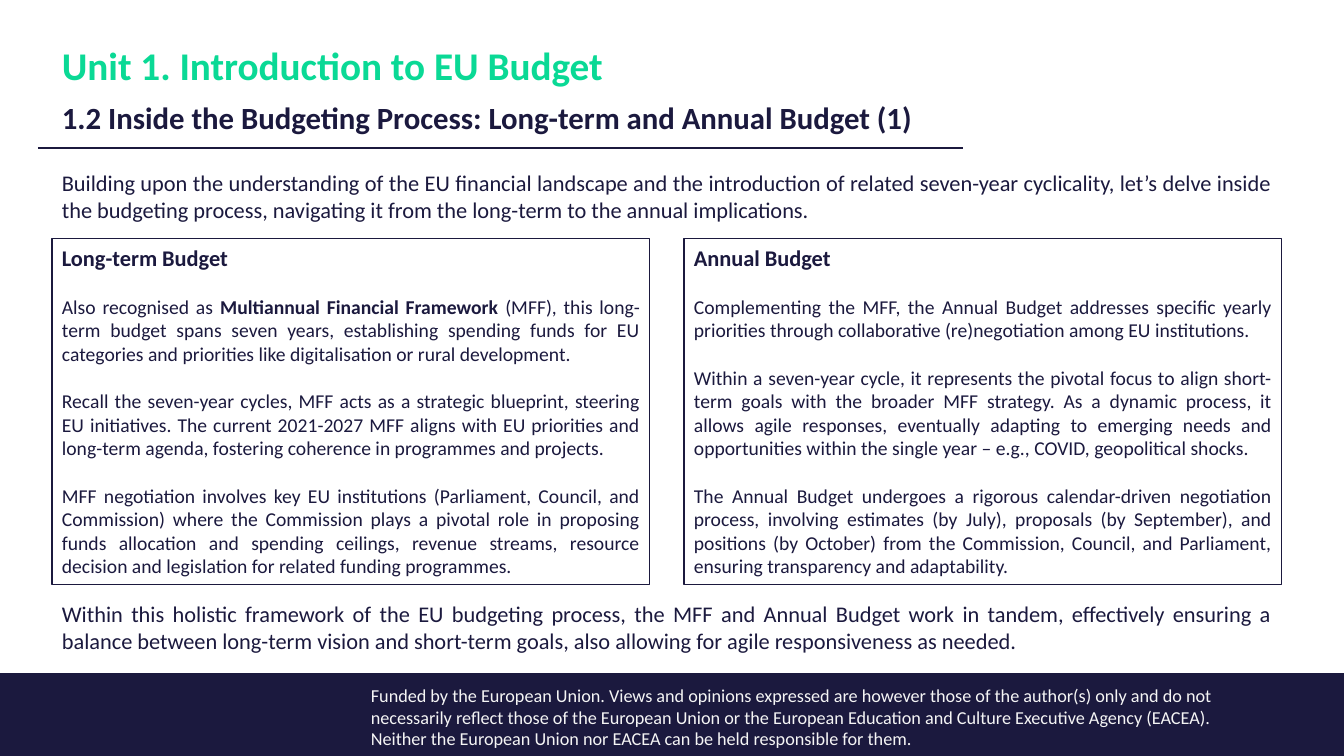
from lxml import etree
from pptx import Presentation
from pptx import util as u
from pptx.dml.color import RGBColor
from pptx.enum import shapes, text
from pptx.oxml.ns import qn

PX = 914400 / 100.8
COLORS = {"navy": "1B193E", "green": "0AD995", "light": "F5F5F5", "white": "FFFFFF"}
FONT = "Calibri"
JUSTIFY, LEFT = text.PP_ALIGN.JUSTIFY, text.PP_ALIGN.LEFT

LONG_TERM = [
    [("Also recognised as ", False), ("Multiannual Financial Framework ", True),
     ("(MFF), this long-term budget spans seven years, establishing spending funds for EU "
      "categories and priorities like digitalisation or rural development.", False)],
    [("Recall the seven-year cycles, MFF acts as a strategic blueprint, steering EU initiatives. "
      "The current 2021-2027 MFF aligns with EU priorities and long-term agenda, fostering "
      "coherence in programmes and projects.", False)],
    [("MFF negotiation involves key EU institutions (Parliament, Council, and Commission) where "
      "the Commission plays a pivotal role in proposing funds allocation and spending ceilings, "
      "revenue streams, resource decision and legislation for related funding programmes.", False)],
]
ANNUAL = [
    [("Complementing the MFF, the Annual Budget addresses specific yearly priorities through "
      "collaborative (re)negotiation among EU institutions.", False)],
    [("Within a seven-year cycle, it represents the pivotal focus to align short-term goals with "
      "the broader MFF strategy. As a dynamic process, it allows agile responses, eventually "
      "adapting to emerging needs and opportunities within the single year – e.g., COVID, "
      "geopolitical shocks.", False)],
    [("The Annual Budget undergoes a rigorous calendar-driven negotiation process, involving "
      "estimates (by July), proposals (by September), and positions (by October) from the "
      "Commission, Council, and Parliament, ensuring transparency and adaptability.", False)],
]
INTRO = ("Building upon the understanding of the EU financial landscape and the introduction of "
         "related seven-year cyclicality, let’s delve inside the budgeting process, navigating it "
         "from the long-term to the annual implications.")
CLOSING = ("Within this holistic framework of the EU budgeting process, the MFF and Annual Budget "
           "work in tandem, effectively ensuring a balance between long-term vision and short-term "
           "goals, also allowing for agile responsiveness as needed.")
DISCLAIMER = ("Funded by the European Union. Views and opinions expressed are however those of the "
              "author(s) only and do not necessarily reflect those of the European Union or the "
              "European Education and Culture Executive Agency (EACEA). Neither the European Union "
              "nor EACEA can be held responsible for them.")


def px(*lengths):
    return [u.Emu(round(length * PX)) for length in lengths]


def color(name):
    return RGBColor.from_string(COLORS[name])


def add_rectangle(slide, box, fill=None, line=None):
    shape = slide.shapes.add_shape(shapes.MSO_SHAPE.RECTANGLE, *px(*box))
    shape.shadow.inherit = False
    if fill:
        shape.fill.solid()
        shape.fill.fore_color.rgb = color(fill)
    else:
        shape.fill.background()
    if line:
        shape.line.color.rgb = color(line)
        shape.line.width = u.Pt(0.75)
    else:
        shape.line.fill.background()
    return shape


def write_paragraph(frame, runs, size, ink="navy", align=JUSTIFY, before=0, spacing=None):
    """Write (wording, bold) runs into the empty first paragraph or a new one."""
    paragraph = frame.paragraphs[0]
    if paragraph.runs:
        paragraph = frame.add_paragraph()
        paragraph.space_before = u.Pt(before)
    paragraph.alignment = align
    if spacing:
        paragraph.line_spacing = spacing
    for wording, bold in runs:
        run = paragraph.add_run()
        run.text = wording
        run.font.name = FONT
        run.font.size = u.Pt(size)
        run.font.bold = bold
        run.font.color.rgb = color(ink)


def add_text_box(slide, box, anchor=text.MSO_ANCHOR.TOP):
    frame = slide.shapes.add_textbox(*px(*box)).text_frame
    frame.word_wrap = True
    frame.vertical_anchor = anchor
    return frame


def add_footer(slide, box):
    left, top, width, height = box
    add_rectangle(slide, box, fill="navy")
    frame = add_text_box(slide, (left + 361, top + 6, 891, height - 6))
    write_paragraph(frame, [(DISCLAIMER, False)], 13, "light", LEFT)


def add_heading(slide, box):
    left, top, width, height = box
    frame = add_text_box(slide, box, text.MSO_ANCHOR.BOTTOM)
    write_paragraph(frame, [("Unit 1. Introduction to EU Budget", True)], 28, "green", spacing=0.9)
    subtitle = "1.2 Inside the Budgeting Process: Long-term and Annual Budget (1)"
    write_paragraph(frame, [(subtitle, True)], 22, align=LEFT, before=10, spacing=0.9)
    # Rule under the heading
    rule_y = top + height + 7
    rule = slide.shapes.add_connector(
        shapes.MSO_CONNECTOR.STRAIGHT, *px(left - 14, rule_y, left + 911, rule_y))
    rule.line.color.rgb = color("navy")
    rule.line.width = u.Pt(1)
    etree.SubElement(rule._element.spPr, qn("a:effectLst"))


def add_statement(slide, box, wording):
    write_paragraph(add_text_box(slide, box), [(wording, False)], 16)


def add_budget_panel(slide, box, title, paragraphs):
    frame = add_rectangle(slide, box, line="navy").text_frame
    frame.word_wrap = True
    frame.vertical_anchor = text.MSO_ANCHOR.TOP
    write_paragraph(frame, [(title, True)], 16)
    for runs in paragraphs:
        write_paragraph(frame, runs, 14, before=17)


def main():
    presentation = Presentation()
    presentation.slide_width, presentation.slide_height = px(1344, 756)
    slide = presentation.slides.add_slide(presentation.slide_layouts[6])
    slide.background.fill.solid()
    slide.background.fill.fore_color.rgb = color("white")

    add_footer(slide, (0, 673, 1344, 83))
    add_heading(slide, (52, 50, 1006, 91))

    # Two panels side by side between the opening and closing statements
    left, panel_width, gap = 52, 598, 34
    for index, (title, paragraphs) in enumerate(
            [("Long-term Budget", LONG_TERM), ("Annual Budget", ANNUAL)]):
        panel_left = left + index * (panel_width + gap)
        add_budget_panel(slide, (panel_left, 239, panel_width, 346), title, paragraphs)
    for top, wording in [(164, INTRO), (595, CLOSING)]:
        add_statement(slide, (left, top, 2 * panel_width + gap, 64), wording)

    presentation.save("out.pptx")


if __name__ == "__main__":
    main()
